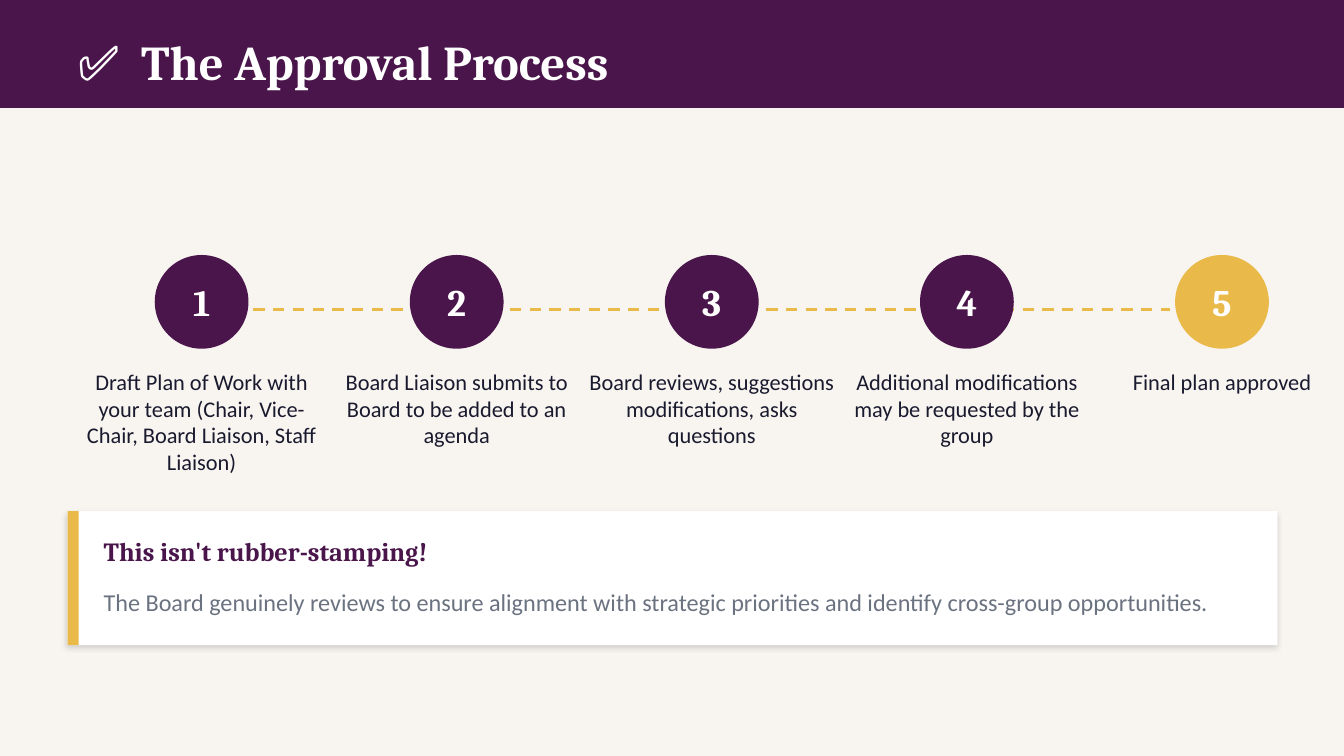
from lxml.etree import SubElement
from pptx import Presentation
from pptx.dml.color import RGBColor
from pptx.enum.dml import MSO_LINE
from pptx.enum.shapes import MSO_CONNECTOR, MSO_SHAPE
from pptx.enum.text import MSO_ANCHOR, MSO_AUTO_SIZE, PP_ALIGN
from pptx.oxml import parse_xml
from pptx.oxml.ns import nsdecls, qn
from pptx.util import Inches, Pt

# Content
TITLE = "✅\tThe Approval Process"
STEPS = [
    "Draft Plan of Work with your team (Chair, Vice-Chair, Board Liaison, Staff Liaison)",
    "Board Liaison submits to Board to be added to an agenda",
    "Board reviews, suggestions modifications, asks questions",
    "Additional modifications may be requested by the group",
    "Final plan approved",
]
CALLOUT_HEADING = "This isn't rubber-stamping!"
CALLOUT_BODY = ("The Board genuinely reviews to ensure alignment with strategic "
                "priorities and identify cross-group opportunities.")

# Look
COLORS = {"plum": "4A154B", "gold": "E9B949", "cream": "F8F5F1",
          "white": "FFFFFF", "ink": "1A1A2E", "gray": "6B7280"}
FORMATS = {
    "title": {"name": "Cambria", "size": Pt(34.7), "bold": True, "color": "white"},
    "number": {"name": "Cambria", "size": Pt(26.7), "bold": True, "color": "white"},
    "label": {"name": "Calibri", "size": Pt(16), "bold": False, "color": "ink"},
    "heading": {"name": "Cambria", "size": Pt(18.7), "bold": True, "color": "plum"},
    "body": {"name": "Calibri", "size": Pt(17.3), "bold": False, "color": "gray"},
}

# Layout in inches
SLIDE_WIDTH, SLIDE_HEIGHT = 13.33, 7.5
MARGIN, CONTENT_WIDTH = 0.67, 12
FIRST_CENTER, STEP_PITCH = 2, 2.53
CIRCLE_TOP, CIRCLE_SIZE = 2.53, 0.93
LABEL_TOP, LABEL_WIDTH, LABEL_HEIGHT = 3.6, 2.67, 1.2
CALLOUT_TOP, CALLOUT_HEIGHT = 5.07, 1.33


def color(name):
    return RGBColor.from_string(COLORS[name])


def write(shape, text, style, align=PP_ALIGN.LEFT, anchor=MSO_ANCHOR.MIDDLE):
    frame = shape.text_frame
    frame.word_wrap = True
    frame.auto_size = MSO_AUTO_SIZE.NONE
    frame.vertical_anchor = anchor
    para = frame.paragraphs[0]
    para.alignment = align
    span = para.add_run()
    span.text = text
    for key, value in FORMATS[style].items():
        if key == "color":
            span.font.color.rgb = color(value)
        else:
            setattr(span.font, key, value)
    return para


def add_box(page, area, *text):
    box = page.shapes.add_textbox(*map(Inches, area))
    write(box, *text)


def add_shape(page, kind, area, fill):
    shape = page.shapes.add_shape(kind, *map(Inches, area))
    shape.shadow.inherit = False
    shape.fill.solid()
    shape.fill.fore_color.rgb = color(fill)
    shape.line.fill.background()
    return shape


def add_header(page):
    title = page.shapes.title
    bar = add_shape(page, MSO_SHAPE.RECTANGLE, (0, 0, SLIDE_WIDTH, 1.07), "plum")
    title.element.addprevious(bar.element)
    title.left, title.top, title.width, title.height = map(
        Inches, (MARGIN, 0.27, CONTENT_WIDTH, 0.67))
    para = write(title, TITLE, "title")
    # Tab stop between the check mark and the words
    stops = SubElement(para._p.get_or_add_pPr(), qn("a:tabLst"))
    SubElement(stops, qn("a:tab"), pos=str(Inches(0.63)), algn="l")


def add_steps(page):
    # Dashed line behind the circles
    line = page.shapes.add_connector(
        MSO_CONNECTOR.STRAIGHT, *map(Inches, (1.73, 3.07, 11.6, 3.07)))
    line.line.color.rgb = color("gold")
    line.line.width = Pt(2)
    line.line.dash_style = MSO_LINE.DASH
    SubElement(line.element.spPr, qn("a:effectLst"))

    # Numbered circles with labels below
    for index, label in enumerate(STEPS):
        center = FIRST_CENTER + index * STEP_PITCH
        fill = "gold" if index == len(STEPS) - 1 else "plum"
        circle = add_shape(
            page, MSO_SHAPE.OVAL,
            (center - CIRCLE_SIZE / 2, CIRCLE_TOP, CIRCLE_SIZE, CIRCLE_SIZE), fill)
        write(circle, str(index + 1), "number", PP_ALIGN.CENTER)
        add_box(page, (center - LABEL_WIDTH / 2, LABEL_TOP, LABEL_WIDTH, LABEL_HEIGHT),
                label, "label", PP_ALIGN.CENTER, MSO_ANCHOR.TOP)


def add_callout(page):
    card = add_shape(page, MSO_SHAPE.RECTANGLE,
                     (MARGIN, CALLOUT_TOP, CONTENT_WIDTH, CALLOUT_HEIGHT), "white")
    effects = card.element.spPr.find(qn("a:effectLst"))
    effects.append(parse_xml(
        f'<a:outerShdw {nsdecls("a")} blurRad="{Pt(4)}" dist="{Pt(2)}" '
        f'dir="{135 * 60000}" algn="bl" rotWithShape="0">'
        '<a:srgbClr val="000000"><a:alpha val="15000"/></a:srgbClr></a:outerShdw>'))
    add_shape(page, MSO_SHAPE.RECTANGLE,
              (MARGIN, CALLOUT_TOP, 0.11, CALLOUT_HEIGHT), "gold")
    add_box(page, (0.93, 5.2, 11.33, 0.53), CALLOUT_HEADING, "heading")
    add_box(page, (0.93, 5.67, 11.33, 0.6), CALLOUT_BODY, "body")


def main():
    deck = Presentation()
    deck.slide_width, deck.slide_height = Inches(SLIDE_WIDTH), Inches(SLIDE_HEIGHT)
    page = deck.slides.add_slide(deck.slide_layouts[5])
    page.background.fill.solid()
    page.background.fill.fore_color.rgb = color("cream")
    add_header(page)
    add_steps(page)
    add_callout(page)
    deck.save("out.pptx")


if __name__ == "__main__":
    main()
